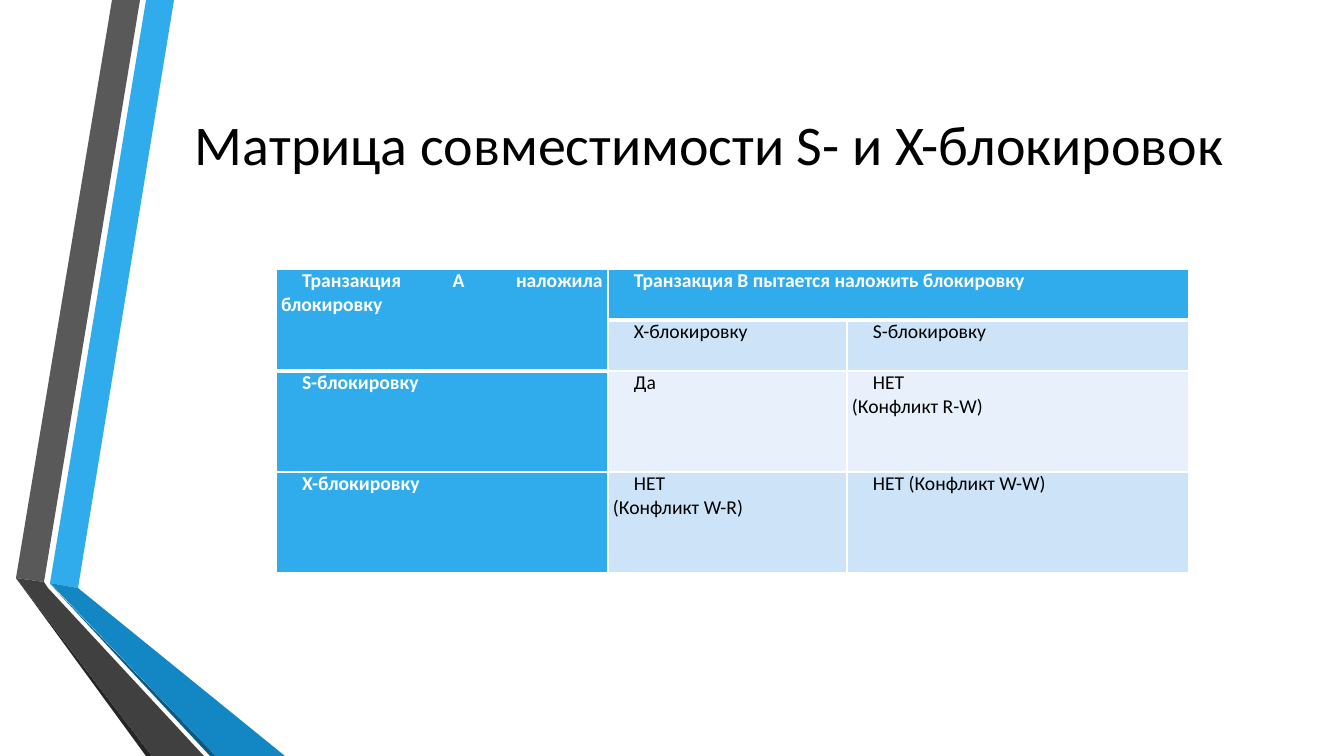
"""Builds a slide with the compatibility matrix of S and X locks."""
import copy
import dataclasses

import pptx
import pptx.dml.color
import pptx.enum.text
import pptx.oxml
import pptx.oxml.ns
import pptx.util

SCALE = 914400 / 100.8
NS = pptx.oxml.ns.nsdecls("a")


@dataclasses.dataclass
class Theme:
    font: str = "Calibri"
    title: int = 40
    cell: int = 14
    black: str = "000000"
    white: str = "FFFFFF"
    blue: str = "30ACEC"
    deep: str = "1287C3"
    navy: str = "0C5A82"
    grey: str = "595959"
    coal: str = "404040"
    dark: str = "262626"
    pale: str = "E8F1FB"
    tint: str = "CDE3F8"


def px(size):
    return pptx.util.Emu(round(size * SCALE))


def color(code):
    return pptx.dml.color.RGBColor.from_string(code)


class Deck:
    def __init__(self, theme, width, height):
        self.theme = theme
        self.deck = pptx.Presentation()
        self.deck.slide_width = px(width)
        self.deck.slide_height = px(height)
        self.slide = self.deck.slides.add_slide(self.deck.slide_layouts[5])

    def runs(self, para, text, size, ink, bold=False):
        for num, line in enumerate(text.split("\n")):
            if num:
                para.add_line_break()
                para._p[-1].append(copy.deepcopy(run._r.rPr))
            run = para.add_run()
            run.text = line
            run.font.name = self.theme.font
            run.font.size = pptx.util.Pt(size)
            run.font.bold = bold
            run.font.color.rgb = color(ink)

    def shape(self, points, fill):
        first, *rest = points
        form = self.slide.shapes.build_freeform(*first, scale=SCALE)
        form.add_line_segments(rest, close=True)
        shape = form.convert_to_shape()
        shape.shadow.inherit = False
        shape.fill.solid()
        shape.fill.fore_color.rgb = color(fill)
        shape.line.fill.background()

    def title(self, text, left, top, width, height, drop):
        shape = self.slide.shapes.title
        shape.left, shape.top = px(left), px(top)
        shape.width, shape.height = px(width), px(height)
        frame = shape.text_frame
        frame.word_wrap = True
        frame.auto_size = pptx.enum.text.MSO_AUTO_SIZE.NONE
        frame.vertical_anchor = pptx.enum.text.MSO_ANCHOR.MIDDLE
        frame.margin_bottom = px(drop)
        para = frame.paragraphs[0]
        para.alignment = pptx.enum.text.PP_ALIGN.CENTER
        self.runs(para, text, self.theme.title, self.theme.black)

    def grid(self, left, top, cols, rows):
        table = self.slide.shapes.add_table(
            len(rows), len(cols), px(left), px(top),
            px(sum(cols)), px(sum(rows))).table
        table.first_row = table.horz_banding = False
        for col, width in zip(table.columns, cols):
            col.width = px(width)
        for row, height in zip(table.rows, rows):
            row.height = px(height)
        return table

    def edge(self, cell, base):
        props = cell._tc.get_or_add_tcPr()
        for side, width in zip("LRTB", (1, 1, 1, base)):
            props.append(pptx.oxml.parse_xml(
                f'<a:ln{side} {NS} w="{pptx.util.Pt(width)}"><a:solidFill>'
                f'<a:srgbClr val="{self.theme.white}"/></a:solidFill></a:ln{side}>'))

    def paint(self, cell, fill, base=1):
        self.edge(cell, base)
        cell.fill.solid()
        cell.fill.fore_color.rgb = color(fill)
        cell.margin_left = cell.margin_right = 0
        cell.margin_top = cell.margin_bottom = 0

    def label(self, cell, text, ink, bold):
        para = cell.text_frame.paragraphs[0]
        para.alignment = pptx.enum.text.PP_ALIGN.JUSTIFY
        para.space_before = pptx.util.Pt(3)
        para.space_after = pptx.util.Pt(8.2)
        props = para._p.get_or_add_pPr()
        for name, size in (("marL", 5), ("marR", 5), ("indent", 21)):
            props.set(name, str(px(size)))
        self.runs(para, text, self.theme.cell, ink, bold)


def main():
    theme = Theme()
    deck = Deck(theme, 1344, 756)
    bands = (
        (theme.blue, ((50, 583), (78, 588), (174, 0), (146, 0))),
        (theme.grey, ((140, 0), (112, 0), (16, 578), (44, 582))),
        (theme.dark, ((16, 578), (146, 756), (152, 756))),
        (theme.navy, ((50, 584), (210, 756), (216, 756))),
        (theme.deep, ((50, 583), (216, 756), (285, 756), (78, 588))),
        (theme.coal, ((204, 756), (48, 588), (44, 582), (16, 578), (152, 756))),
    )
    for fill, points in bands:
        deck.shape(points, fill)
    deck.title("Матрица совместимости S- и X-блокировок ", 163, 76, 1105, 193, 63)

    texts = (
        ("Транзакция A наложила блокировку ",
         "Транзакция B пытается наложить блокировку", ""),
        ("", "X-блокировку ", "S-блокировку "),
        ("S-блокировку ", "Да ", "НЕТ \n(Конфликт R-W) "),
        ("X-блокировку ", "НЕТ \n(Конфликт W-R) ", "НЕТ (Конфликт W-W)"),
    )
    fills = (theme.blue, theme.tint, theme.pale, theme.tint)
    table = deck.grid(276, 269, (332, 239, 342), (51, 51, 101, 101))
    table.cell(0, 0).merge(table.cell(1, 0))
    table.cell(0, 1).merge(table.cell(0, 2))
    for row, (line, fill) in enumerate(zip(texts, fills)):
        for col, text in enumerate(line):
            cell = table.cell(row, col)
            head = row == 0 or col == 0
            base = 3 if row == 0 or (row, col) == (1, 0) else 1
            deck.paint(cell, theme.blue if head else fill, base)
            if text:
                deck.label(cell, text, theme.white if head else theme.black, head)
    deck.deck.save("out.pptx")


if __name__ == "__main__":
    main()
